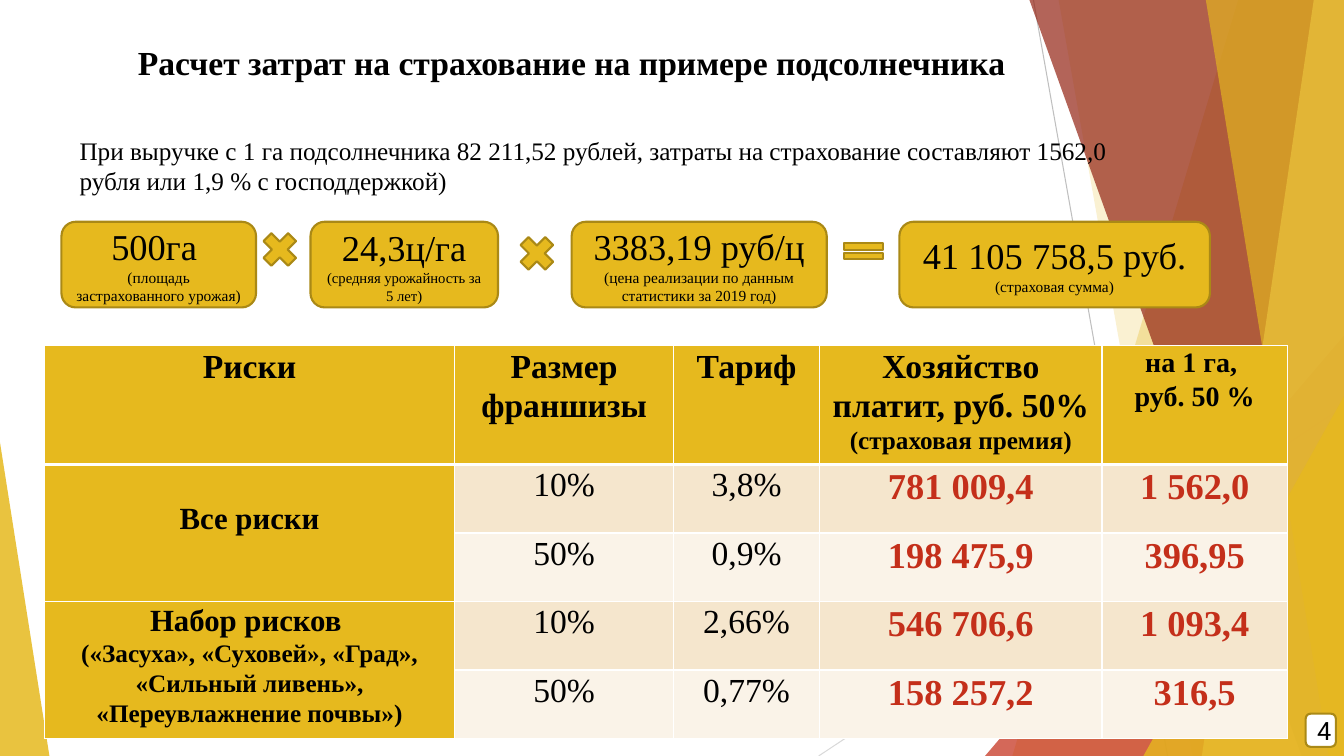
from dataclasses import dataclass
from lxml.etree import SubElement
from pptx import Presentation
from pptx.dml.color import RGBColor
from pptx.enum.shapes import MSO_CONNECTOR, MSO_SHAPE
from pptx.enum.text import MSO_ANCHOR, PP_ALIGN
from pptx.oxml import parse_xml
from pptx.oxml.ns import nsdecls, qn
from pptx.util import Inches, Pt


@dataclass(frozen=True)
class Theme:
    gold: str = "E6B91E"
    gold_edge: str = "AA8916"
    pale_gold: str = "F0D578"
    red: str = "C42F1A"
    dark_red: str = "932313"
    band_dark: str = "F5E6CD"
    band_light: str = "FAF3E8"
    white: str = "FFFFFF"
    black: str = "000000"
    serif: str = "Times New Roman"
    sans: str = "Roboto"
    heading: float = 24
    figure: float = 26
    risk: float = 22
    per_hectare: float = 20
    body: float = 18
    caption: float = 11
    small_caption: float = 10.5


THEME = Theme()


def color(value):
    return RGBColor.from_string(value)


# Shared helpers
def add_run(paragraph, text, size, bold=False, ink=THEME.black, font=THEME.serif):
    run = paragraph.add_run()
    run.text = text
    run.font.size = Pt(size)
    run.font.name = font
    run.font.bold = bold
    run.font.color.rgb = color(ink)


def write(frame, paragraphs, align=PP_ALIGN.CENTER, spacing=None, **style):
    """Each paragraph is a list of (text, size) runs."""
    frame.word_wrap = True
    for index, runs in enumerate(paragraphs):
        paragraph = frame.paragraphs[0] if index == 0 else frame.add_paragraph()
        paragraph.alignment = align
        if spacing:
            paragraph.line_spacing = spacing
        for text, size in runs:
            add_run(paragraph, text, size, **style)


def paint(shape, fill, edge=None, opacity=100):
    shape.shadow.inherit = False
    shape.fill.solid()
    shape.fill.fore_color.rgb = color(fill)
    if opacity < 100:
        tint = shape.fill._xPr.find(qn("a:solidFill"))[0]
        SubElement(tint, qn("a:alpha")).set("val", str(opacity * 1000))
    if edge:
        shape.line.color.rgb = color(edge)
        shape.line.width = Pt(1.5)
    else:
        shape.line.fill.background()


def add_block(slide, kind, box, fill=THEME.gold, edge=THEME.gold_edge):
    block = slide.shapes.add_shape(kind, *map(Inches, box))
    paint(block, fill, edge)
    return block


# Decorative facets at the slide edges
def draw_facets(slide, box):
    left, top, width, height = box
    right, bottom = left + width, top + height

    def ray(start, end, ink):
        line = slide.shapes.add_connector(MSO_CONNECTOR.STRAIGHT, *map(Inches, start + end))
        line.line.color.rgb = color(ink)
        line.line.width = Pt(0.75)
        SubElement(line._element.spPr, qn("a:effectLst"))

    def facet(top_x, bottom_x, fill, opacity):
        outline = slide.shapes.build_freeform(Inches(top_x), Inches(top))
        outline.add_line_segments([(Inches(x), Inches(y)) for x, y in (
            (right, top), (right, bottom), (bottom_x, bottom))])
        paint(outline.convert_to_shape(), fill, opacity=opacity)

    def wedge(x, wedge_width, wedge_height, apex, fill, opacity):
        triangle = slide.shapes.add_shape(
            MSO_SHAPE.ISOSCELES_TRIANGLE, Inches(x), Inches(bottom - wedge_height),
            Inches(wedge_width), Inches(wedge_height))
        triangle.adjustments[0] = apex
        paint(triangle, fill, opacity=opacity)

    ray((10.25, top), (11.58, bottom), "BFBFBF")
    ray((right, 4.03), (8.12, bottom), "D9D9D9")
    facet(12.28, 10.04, THEME.gold, 30)
    facet(10.5, 11.83, THEME.gold, 20)
    wedge(right - 3.56, 3.56, 4.17, 1, THEME.red, 72)
    facet(10.21, 12.91, THEME.dark_red, 70)
    facet(13.03, 11.92, THEME.pale_gold, 70)
    facet(11.96, 13.18, THEME.gold, 65)
    wedge(right - 1.99, 1.99, 3.57, 1, THEME.gold, 80)
    wedge(left, 0.49, 3.11, 0, THEME.gold, 85)


# Title and introduction
def draw_text(slide, box, text, size, align, bold=False, anchor=MSO_ANCHOR.TOP):
    frame = slide.shapes.add_textbox(*map(Inches, box)).text_frame
    frame.vertical_anchor = anchor
    write(frame, [[(text, size)]], align, bold=bold)


# Area x yield x price = insured sum
def draw_formula(slide, box):
    left, top, _, height = box
    big, small = THEME.figure, THEME.caption
    factors = [
        (0, 1.93, [[("500га ", big)], [("(площадь застрахованного урожая)", small)]]),
        (2.47, 1.86, [[("24,3ц/га ", big),
                       ("(средняя урожайность за 5 лет)", THEME.small_caption)]]),
        (5.06, 2.53, [[("3383,19 руб/ц ", big),
                       ("(цена реализации по данным статистики за 2019 год)", small)]]),
        (8.31, 3.08, [[("41 105 758,5 руб. ", big), ("(страховая сумма)", small)]]),
    ]
    for x, width, paragraphs in factors:
        factor = add_block(slide, MSO_SHAPE.ROUNDED_RECTANGLE, (left + x, top, width, height))
        factor.text_frame.vertical_anchor = MSO_ANCHOR.MIDDLE
        write(factor.text_frame, paragraphs)

    signs = [
        (MSO_SHAPE.MATH_EQUAL, 7.69, 0.16, 0.53, 0.27),
        (MSO_SHAPE.MATH_MULTIPLY, 4.48, 0.08, 0.47, 0.47),
        (MSO_SHAPE.MATH_MULTIPLY, 1.93, 0.04, 0.47, 0.47),
    ]
    for kind, x, y, width, sign_height in signs:
        add_block(slide, kind, (left + x, top + y, width, sign_height))


# Table of risks and premiums
def style_cell(cell, fill, row):
    cell.margin_left = cell.margin_right = Inches(0.07)
    cell.margin_top = cell.margin_bottom = 0
    cell.fill.solid()
    cell.fill.fore_color.rgb = color(fill)
    widths = {"L": 1, "R": 1, "T": 3 if row == 1 else 1, "B": 3 if row == 0 else 1}
    for index, (side, width) in enumerate(widths.items()):
        cell._tc.get_or_add_tcPr().insert(index, parse_xml(
            f'<a:ln{side} {nsdecls("a")} w="{Pt(width)}"><a:solidFill>'
            f'<a:srgbClr val="{THEME.white}"/></a:solidFill></a:ln{side}>'))


def draw_risk_table(slide, box):
    head, body, risk = THEME.heading, THEME.body, THEME.risk
    headings = [
        [[("Риски", head)]],
        [[("Размер франшизы", head)]],
        [[("Тариф", head)]],
        [[("Хозяйство платит, руб. 50% ", head), ("(страховая премия)", body)]],
        [[("на 1 га, ", THEME.per_hectare)], [("руб. 50 %", THEME.per_hectare)]],
    ]
    risks = {
        1: [[("Все риски", risk)]],
        3: [[("Набор рисков ", risk)],
            [("(«Засуха», «Суховей», «Град», «Сильный ливень», «Переувлажнение почвы»)", body)]],
    }
    premiums = [
        ("10%", "3,8%", "781 009,4", "1 562,0"),
        ("50%", "0,9%", "198 475,9", "396,95"),
        ("10%", "2,66%", "546 706,6", "1 093,4"),
        ("50%", "0,77%", "158 257,2", "316,5"),
    ]
    table = slide.shapes.add_table(5, 5, *map(Inches, box)).table
    for column, width in zip(table.columns, (4.07, 2.17, 1.45, 2.8, 1.84)):
        column.width = Inches(width)
    for row, height in zip(table.rows, (1.08, *[0.68] * 4)):
        row.height = Inches(height)
    for r in range(5):
        for c in range(5):
            band = THEME.band_dark if r % 2 else THEME.band_light
            style_cell(table.cell(r, c), THEME.gold if r == 0 or c == 0 else band, r)

    for c, paragraphs in enumerate(headings):
        write(table.cell(0, c).text_frame, paragraphs, spacing=1.07, bold=True)
    for r, paragraphs in risks.items():
        table.cell(r, 0).merge(table.cell(r + 1, 0))
        write(table.cell(r, 0).text_frame, paragraphs, spacing=1.07, bold=True)
    table.cell(1, 0).margin_top = Inches(0.35)
    for r, values in enumerate(premiums, 1):
        for c, value in enumerate(values, 1):
            money = c > 2
            write(table.cell(r, c).text_frame, [[(value, THEME.figure if money else head)]],
                  spacing=1.07, bold=money, ink=THEME.red if money else THEME.black)


# Slide number badge
def draw_page_number(slide, box):
    badge = add_block(slide, MSO_SHAPE.ROUNDED_RECTANGLE, box, THEME.white)
    badge.text_frame.vertical_anchor = MSO_ANCHOR.MIDDLE
    write(badge.text_frame, [[("4", THEME.body)]], font=THEME.sans)


def main():
    deck = Presentation()
    deck.slide_width, deck.slide_height = Inches(13.33), Inches(7.5)
    slide = deck.slides.add_slide(deck.slide_layouts[6])
    draw_facets(slide, (0, 0, 13.33, 7.5))
    draw_text(slide, (0.97, 0.37, 9.4, 0.52), "Расчет затрат на страхование на примере подсолнечника",
              THEME.heading, PP_ALIGN.CENTER, bold=True)
    draw_risk_table(slide, (0.44, 3.43, 12.33, 3.8))
    draw_formula(slide, (0.61, 2.2, 11.39, 0.85))
    draw_page_number(slide, (12.95, 7.08, 0.3, 0.33))
    draw_text(slide, (0.69, 1.29, 10.58, 0.69),
              "При выручке с 1 га подсолнечника 82 211,52 рублей, затраты на страхование "
              "составляют 1562,0 рубля или 1,9 % с господдержкой)", THEME.body, PP_ALIGN.LEFT)
    deck.save("out.pptx")


if __name__ == "__main__":
    main()
